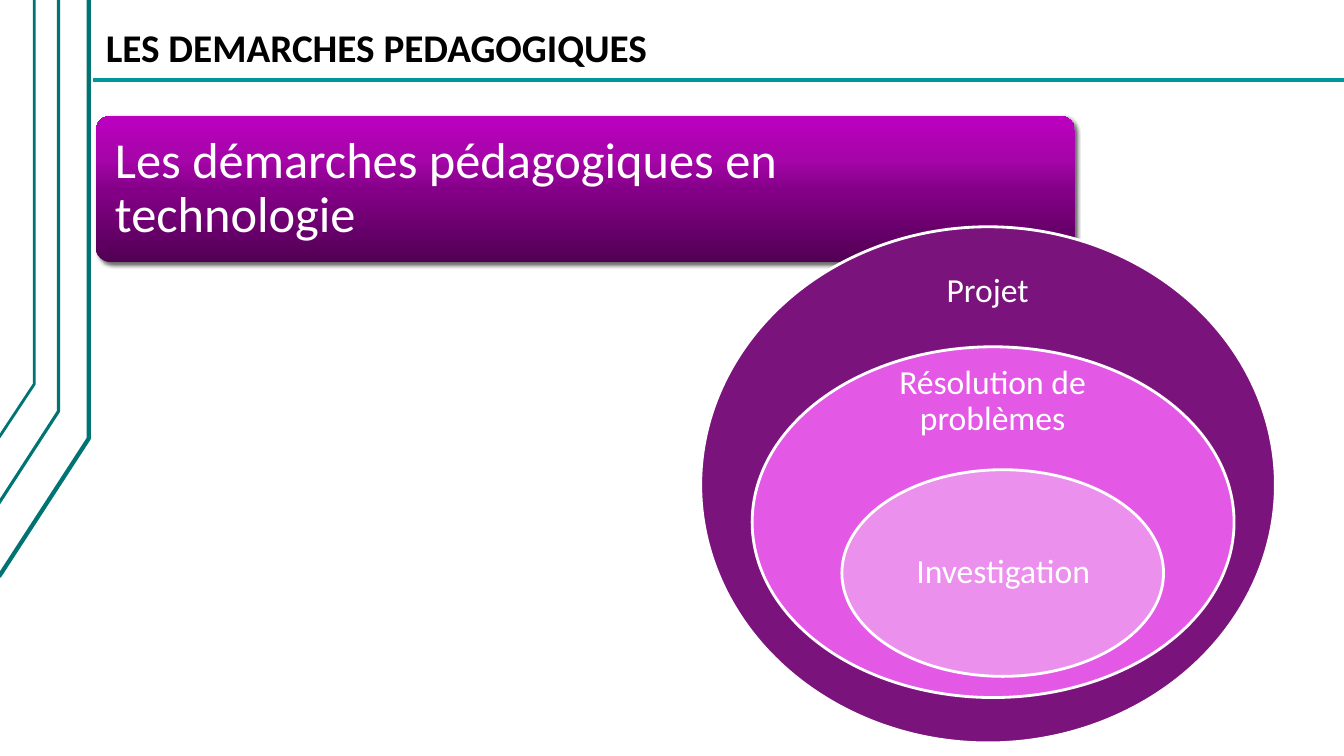
import lxml.etree
import pptx
import pptx.dml.color
import pptx.enum.shapes
import pptx.enum.text
import pptx.oxml
import pptx.util

Inches = pptx.util.Inches
Pt = pptx.util.Pt
Shape = pptx.enum.shapes.MSO_SHAPE
Align = pptx.enum.text.PP_ALIGN
Anchor = pptx.enum.text.MSO_ANCHOR
NS = 'xmlns:a="http://schemas.openxmlformats.org/drawingml/2006/main"'


def color(code):
    """Turn a hex string into a colour."""
    return pptx.dml.color.RGBColor.from_string(code)


def stroke(item, code, width):
    """Set the colour and width of a line."""
    item.line.color.rgb = color(code)
    item.line.width = Pt(width)


def bend(slide, points, width):
    """Draw an open line of the margin."""
    spots = [(Inches(x), Inches(y)) for x, y in points]
    build = slide.shapes.build_freeform(*spots[0])
    build.add_line_segments(spots[1:], close=False)
    item = build.convert_to_shape()
    item.shadow.inherit = False
    item.fill.background()
    stroke(item, "007373", width)


def rule(slide, left, right, top):
    """Draw the rule below the title."""
    item = slide.shapes.add_connector(
        pptx.enum.shapes.MSO_CONNECTOR.STRAIGHT,
        Inches(left), Inches(top), Inches(right), Inches(top))
    stroke(item, "009999", 3)
    lxml.etree.SubElement(item._element.spPr, pptx.oxml.ns.qn("a:effectLst"))


def label(slide, box, text, size, pads, tint="FFFFFF", bold=False,
          align=Align.LEFT, anchor=Anchor.MIDDLE):
    """Write a text in a box with side and top insets."""
    frame = slide.shapes.add_textbox(*map(Inches, box)).text_frame
    frame.word_wrap = True
    frame.vertical_anchor = anchor
    frame.margin_left = frame.margin_right = Inches(pads[0])
    frame.margin_top = frame.margin_bottom = Inches(pads[1])
    para = frame.paragraphs[0]
    para.text = text
    para.alignment = align
    para.line_spacing = 0.9
    font = para.runs[0].font
    font.name = "Calibri"
    font.size = Pt(size)
    font.bold = bold
    font.color.rgb = color(tint)


def banner(slide, box, stops):
    """Draw the rounded bar with its gradient and shadow."""
    item = slide.shapes.add_shape(Shape.ROUNDED_RECTANGLE, *map(Inches, box))
    item.adjustments[0] = 0.1
    item.line.fill.background()
    marks = "".join(
        f'<a:gs pos="{pos * 1000}"><a:srgbClr val="{code}"/></a:gs>'
        for pos, code in stops)
    fill = pptx.oxml.parse_xml(
        f'<a:gradFill {NS} rotWithShape="1"><a:gsLst>{marks}</a:gsLst>'
        '<a:lin ang="16200000" scaled="0"/></a:gradFill>')
    shade = pptx.oxml.parse_xml(
        f'<a:effectLst {NS}><a:outerShdw blurRad="{Pt(3)}" dist="{Pt(2)}" '
        'dir="2700000" algn="tl" rotWithShape="0"><a:srgbClr val="000000">'
        '<a:alpha val="60000"/></a:srgbClr></a:outerShdw></a:effectLst>')
    props = item._element.spPr
    props.find(pptx.oxml.ns.qn("a:prstGeom")).addnext(fill)
    props.append(shade)


def oval(slide, box, code):
    """Draw one of the nested ovals."""
    item = slide.shapes.add_shape(Shape.OVAL, *map(Inches, box))
    item.shadow.inherit = False
    item.fill.solid()
    item.fill.fore_color.rgb = color(code)
    stroke(item, "FFFFFF", 2)


def main():
    """Build the slide and save it."""
    deck = pptx.Presentation()
    deck.slide_width = Inches(13.33)
    deck.slide_height = Inches(7.5)
    slide = deck.slides.add_slide(deck.slide_layouts[6])

    for side, knee, foot, width in (
            (0.88, 4.35, 5.72, 3), (0.58, 4.08, 4.99, 2.25),
            (0.34, 3.81, 4.34, 2)):
        bend(slide, [(-0.01, foot), (side, knee), (side, 0)], width)

    label(slide, (0.92, 0.21, 12.21, 0.58), "LES DEMARCHES PEDAGOGIQUES",
          28, (0.13, 0.07), "000000", True, anchor=Anchor.TOP)
    rule(slide, 0.92, 13.33, 0.79)

    banner(slide, (0.95, 1.15, 9.71, 1.45),
           [(0, "520054"), (50, "850088"), (70, "A505A9"), (100, "BC00C0")])
    label(slide, (0.99, 1.19, 6.97, 1.37),
          "Les démarches pédagogiques en technologie", 36, (0.15, 0.15))

    rings = (
        ("Projet", "7B137D", (6.95, 2.25, 5.7, 5.12),
         (8.8, 2.51, 1.99, 0.77)),
        ("Résolution de problèmes", "E359E6", (7.46, 3.44, 4.78, 3.48),
         (8.73, 3.66, 2.23, 0.65)),
        ("Investigation", "EC90EE", (8.35, 4.66, 3.19, 2.05),
         (8.82, 5.17, 2.26, 1.03)))
    for text, code, ring, box in rings:
        oval(slide, ring, code)
        label(slide, box, text, 24, (0.18, 0.18), align=Align.CENTER)

    deck.save("out.pptx")


if __name__ == "__main__":
    main()
